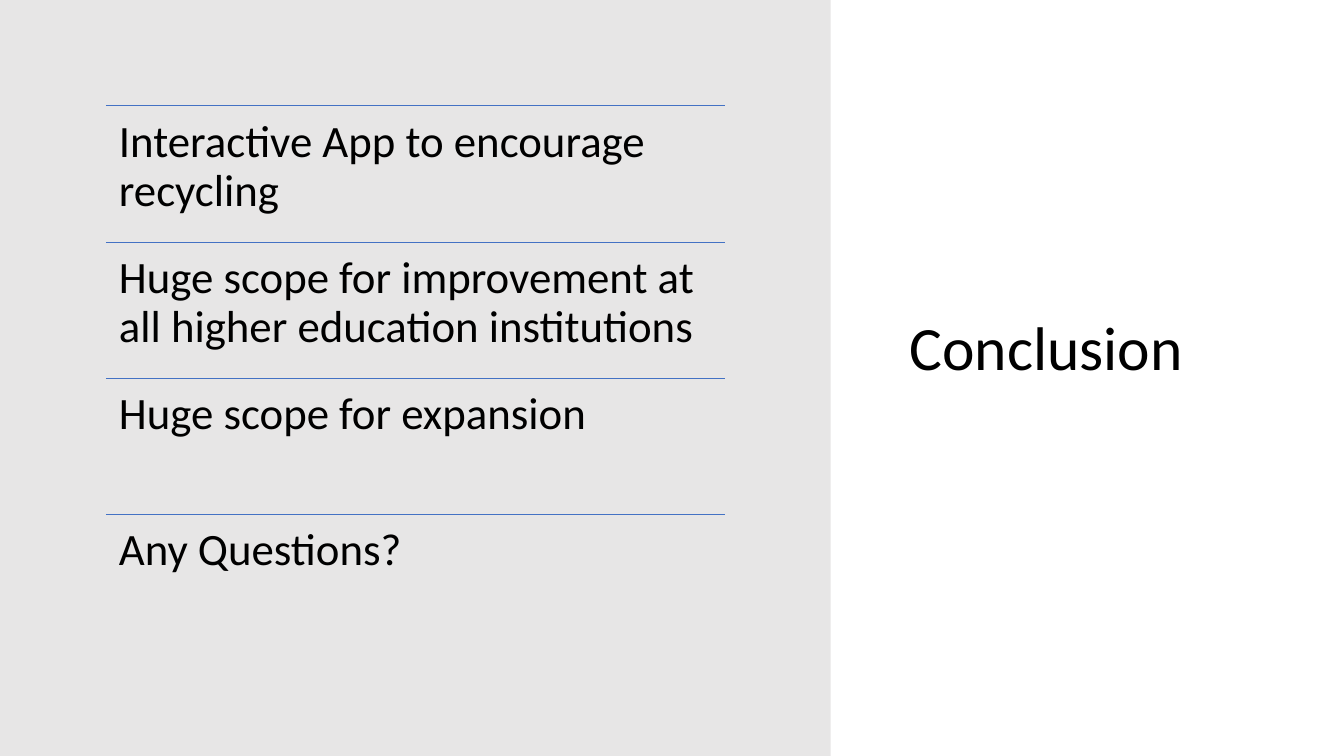
"""Build the conclusion slide: a ruled list on a grey panel, with the title at right."""
import pptx
import pptx.util
import pptx.dml.color
import pptx.enum.shapes
import pptx.enum.text
import pptx.oxml.ns
from lxml import etree

Inches, Pt = pptx.util.Inches, pptx.util.Pt
RGB = pptx.dml.color.RGBColor.from_string
ANCHOR = pptx.enum.text.MSO_ANCHOR
COLORS = {"panel": "E7E6E6", "rule": "4472C4", "text": "000000"}
POINTS = [
    "Interactive App to encourage recycling",
    "Huge scope for improvement at all higher education institutions",
    "Huge scope for expansion",
    "Any Questions?",
]
LEFT, TOP, WIDTH, ROW = 1.05, 1.05, 6.14, 1.35


def write(shape, text, size, frame_format):
    tf = shape.text_frame
    for name, value in frame_format.items():
        setattr(tf, name, value)
    p = tf.paragraphs[0]
    p.alignment = pptx.enum.text.PP_ALIGN.LEFT
    p.line_spacing = 0.9
    r = p.add_run()
    r.text = text
    for name, value in {"name": "Calibri", "size": Pt(size)}.items():
        setattr(r.font, name, value)
    r.font.color.rgb = RGB(COLORS["text"])


prs = pptx.Presentation()
prs.slide_width, prs.slide_height = Inches(13.33), Inches(7.5)
s = prs.slides.add_slide(prs.slide_layouts[5])

panel = s.shapes.add_shape(
    pptx.enum.shapes.MSO_SHAPE.RECTANGLE, 0, 0, Inches(8.24), Inches(7.5))
panel.shadow.inherit = False
panel.fill.solid()
panel.fill.fore_color.rgb = RGB(COLORS["panel"])
panel.line.fill.background()

title = s.shapes.title
box = {"left": 8.92, "top": 0.9, "width": 3.5, "height": 5.16}
for name, value in box.items():
    setattr(title, name, Inches(value))
write(title, "Conclusion", 44, {
    "word_wrap": True,
    "auto_size": pptx.enum.text.MSO_AUTO_SIZE.NONE,
    "vertical_anchor": ANCHOR.MIDDLE,
})

margins = ("margin_left", "margin_top", "margin_right", "margin_bottom")
point_format = {"word_wrap": True, "vertical_anchor": ANCHOR.TOP}
point_format.update({name: Inches(0.13) for name in margins})

for i, point in enumerate(POINTS):
    y = Inches(TOP + i * ROW)
    rule = s.shapes.add_connector(
        pptx.enum.shapes.MSO_CONNECTOR.STRAIGHT,
        Inches(LEFT), y, Inches(LEFT + WIDTH), y)
    rule.line.color.rgb = RGB(COLORS["rule"])
    rule.line.width = Pt(0.5)
    etree.SubElement(rule._element.spPr, pptx.oxml.ns.qn("a:effectLst"))
    sp = s.shapes.add_textbox(Inches(LEFT), y, Inches(WIDTH), Inches(ROW))
    write(sp, point, 32, point_format)

prs.save("out.pptx")
